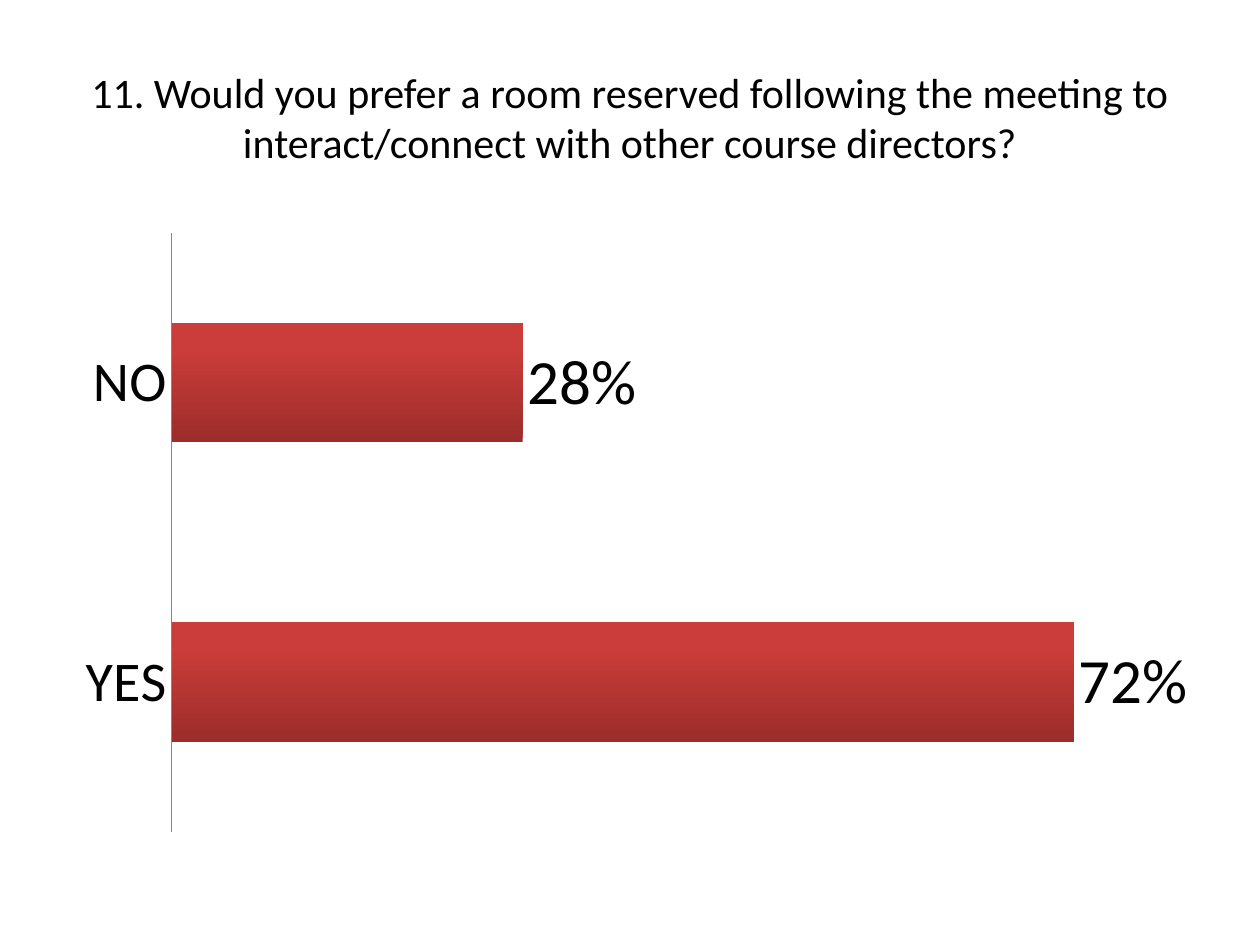
from pptx import Presentation
from pptx.chart.data import CategoryChartData
from pptx.dml.color import RGBColor
from pptx.enum.chart import XL_CHART_TYPE, XL_LABEL_POSITION, XL_TICK_MARK
from pptx.enum.text import MSO_ANCHOR, PP_ALIGN
from pptx.util import Pt

COLORS = {
    "text": "000000",
    "axis": "868686",
    "bar_bottom": "9B2D2A",
    "bar_top": "CB3D3A",
}
FONT = "Calibri"
QUESTION = (
    "11. Would you prefer a room reserved following the meeting to "
    "interact/connect with other course directors?"
)
ANSWERS = {"YES": 0.72, "NO": 0.28}


def color(name):
    """Return the named colour."""
    return RGBColor.from_string(COLORS[name])


def style_font(font, size):
    """Set the slide's typeface and text colour at the given size."""
    font.name = FONT
    font.size = Pt(size)
    font.bold = False
    font.color.rgb = color("text")


def place_question(title, left, top, width, height):
    """Place the survey question in the title placeholder."""
    title.left, title.top = Pt(left), Pt(top)
    title.width, title.height = Pt(width), Pt(height)
    frame = title.text_frame
    frame.word_wrap = True
    frame.vertical_anchor = MSO_ANCHOR.MIDDLE
    paragraph = frame.paragraphs[0]
    paragraph.alignment = PP_ALIGN.CENTER
    run = paragraph.add_run()
    run.text = QUESTION
    style_font(run.font, 24)


def place_answers(slide, left, top, width, height):
    """Draw the share of each answer as horizontal bars."""
    data = CategoryChartData(number_format="0%")
    data.categories = list(ANSWERS)
    data.add_series("Series 1", list(ANSWERS.values()))
    chart = slide.shapes.add_chart(
        XL_CHART_TYPE.BAR_CLUSTERED,
        Pt(left), Pt(top), Pt(width), Pt(height), data,
    ).chart
    chart.has_title = False
    chart.has_legend = False
    style_font(chart.font, 18)

    answer_axis = chart.category_axis
    answer_axis.major_tick_mark = XL_TICK_MARK.NONE
    answer_axis.format.line.color.rgb = color("axis")
    answer_axis.format.line.width = Pt(0.75)
    style_font(answer_axis.tick_labels.font, 32)

    share_axis = chart.value_axis
    share_axis.minimum_scale = 0
    share_axis.maximum_scale = 0.8
    share_axis.has_major_gridlines = False
    share_axis.visible = False

    plot = chart.plots[0]
    plot.gap_width = 150
    plot.overlap = -25
    plot.vary_by_categories = False

    bar_fill = plot.series[0].format.fill
    bar_fill.gradient()
    bar_fill.gradient_angle = 90
    bottom, upper = bar_fill.gradient_stops
    bottom.color.rgb, bottom.position = color("bar_bottom"), 0
    upper.color.rgb, upper.position = color("bar_top"), 0.8

    plot.has_data_labels = True
    share_labels = plot.data_labels
    share_labels.show_value = True
    share_labels.number_format = "0%"
    share_labels.number_format_is_linked = False
    share_labels.position = XL_LABEL_POSITION.OUTSIDE_END
    style_font(share_labels.font, 36)


def main():
    """Build and save the survey slide."""
    presentation = Presentation()
    presentation.slide_width, presentation.slide_height = Pt(720), Pt(540)
    slide = presentation.slides.add_slide(presentation.slide_layouts[5])
    place_question(slide.shapes.title, 36, 21.6, 648, 90)
    place_answers(slide, 36, 126, 648, 356.4)
    presentation.save("out.pptx")


if __name__ == "__main__":
    main()
